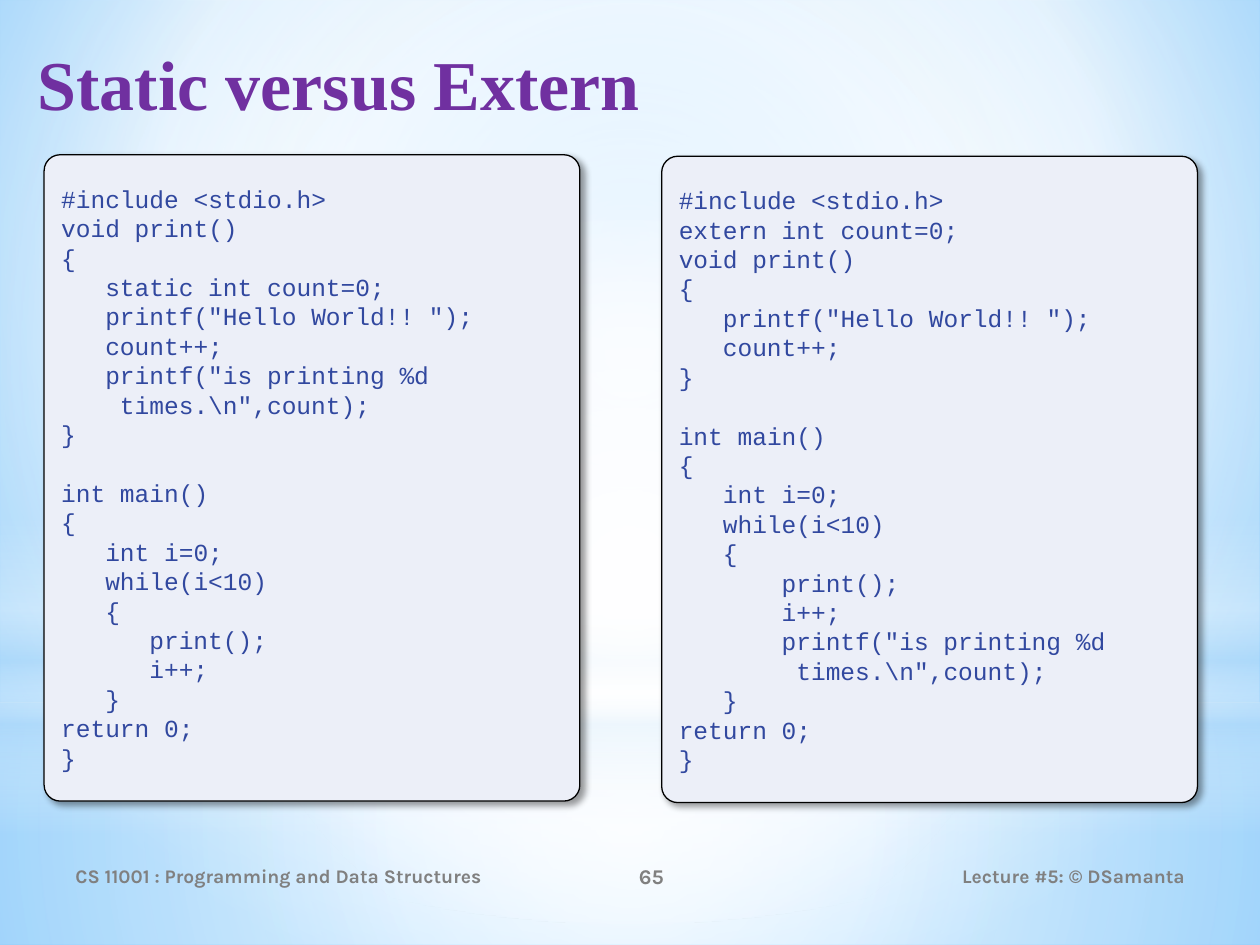
from dataclasses import dataclass

from pptx import Presentation
from pptx.dml.color import RGBColor
from pptx.enum.shapes import MSO_SHAPE as Shape
from pptx.enum.text import MSO_ANCHOR as Anchor, PP_ALIGN as Align
from pptx.oxml import parse_xml
from pptx.oxml.ns import nsdecls, qn
from pptx.util import Cm, Pt

STATIC_CODE = r"""
#include <stdio.h>
void print()
{
   static int count=0;
   printf("Hello World!! ");
   count++;
   printf("is printing %d
    times.\n",count);
}

int main()
{
   int i=0;
   while(i<10)
   {
      print();
      i++;
   }
return 0;
}
"""

EXTERN_CODE = r"""
#include <stdio.h>
extern int count=0;
void print()
{
   printf("Hello World!! ");
   count++;
}

int main()
{
   int i=0;
   while(i<10)
   {
       print();
       i++;
       printf("is printing %d
        times.\n",count);
   }
return 0;
}
"""


@dataclass(frozen=True)
class Theme:
    heading: str = "7030A0"
    code: str = "31489F"
    panel: str = "ECEFF8"
    outline: str = "000000"
    footer: str = "808080"
    white: str = "FFFFFF"
    haze: str = "B4DCFA"
    sky: str = "9ED5FF"
    deep_sky: str = "5BB9FF"
    heading_font: str = "Times New Roman"
    code_font: str = "Courier New"
    footer_font: str = "Karla"
    heading_size: float = 40
    code_size: float = 14
    code_line: float = 16.8
    footer_size: float = 11
    number_size: float = 12


CENTRE = (50, 50, 50, 50)


class SlideBuilder:
    def __init__(self, slide, theme):
        self.slide = slide
        self.theme = theme

    def set_gradient(self, fill, owner, stops, focus=None):
        """Stops are (position, colour, opacity) in percent; without a focus the gradient runs down."""
        fill.gradient()
        gradient = owner.find(".//" + qn("a:gradFill"))
        for child in list(gradient):
            gradient.remove(child)
        stop_xml = "".join(
            f'<a:gs pos="{pos * 1000}"><a:srgbClr val="{colour}">'
            f'<a:alpha val="{opacity * 1000}"/></a:srgbClr></a:gs>'
            for pos, colour, opacity in stops)
        gradient.append(parse_xml(f'<a:gsLst {nsdecls("a")}>{stop_xml}</a:gsLst>'))
        if focus:
            left, top, right, bottom = (edge * 1000 for edge in focus)
            direction = (f'<a:path {nsdecls("a")} path="circle"><a:fillToRect l="{left}" '
                         f't="{top}" r="{right}" b="{bottom}"/></a:path>')
        else:
            direction = f'<a:lin {nsdecls("a")} ang="5400000" scaled="0"/>'
        gradient.append(parse_xml(direction))

    def background(self, stops, focus):
        self.set_gradient(self.slide.background.fill, self.slide._element, stops, focus)

    def glow(self, kind, top, height, stops, focus=CENTRE):
        """Full-width translucent band of the backdrop."""
        band = self.slide.shapes.add_shape(kind, Cm(0), Cm(top), Cm(25.4), Cm(height))
        band.shadow.inherit = False
        band.line.fill.background()
        self.set_gradient(band.fill, band._element, stops, focus)

    def style(self, paragraph, font, size, colour, bold=False):
        paragraph.font.name = font
        paragraph.font.size = Pt(size)
        paragraph.font.bold = bold
        paragraph.font.color.rgb = RGBColor.from_string(colour)

    def label(self, text, box, font, size, colour, align=Align.LEFT, anchor=Anchor.MIDDLE):
        frame = self.slide.shapes.add_textbox(*map(Cm, box)).text_frame
        frame.word_wrap = True
        frame.vertical_anchor = anchor
        paragraph = frame.paragraphs[0]
        paragraph.text = text
        paragraph.alignment = align
        self.style(paragraph, font, size, colour, bold=True)
        return frame

    def heading(self, text):
        theme = self.theme
        frame = self.label(text, (0.51, 0.53, 24.2, 3.18), theme.heading_font,
                           theme.heading_size, theme.heading, anchor=Anchor.TOP)
        frame.margin_top = Cm(0.28)

    def footer(self, text, left, width, align, size):
        self.label(text, (left, 17.15, width, 1.02), self.theme.footer_font,
                   size, self.theme.footer, align)

    def code_panel(self, code, left, top):
        theme = self.theme
        panel = self.slide.shapes.add_shape(
            Shape.ROUNDED_RECTANGLE, Cm(left), Cm(top), Cm(10.8), Cm(13.03))
        panel.adjustments[0] = 0.03
        panel.fill.solid()
        panel.fill.fore_color.rgb = RGBColor.from_string(theme.panel)
        panel.line.color.rgb = RGBColor.from_string(theme.outline)
        panel.line.width = Pt(0.75)
        self.cast_shadow(panel)
        frame = panel.text_frame
        frame.word_wrap = True
        frame.vertical_anchor = Anchor.MIDDLE
        self.write_code(frame, code)

    def cast_shadow(self, panel):
        panel.shadow.inherit = False
        effects = panel._element.spPr.find(qn("a:effectLst"))
        effects.append(parse_xml(
            f'<a:outerShdw {nsdecls("a")} blurRad="{Pt(4)}" dist="{Pt(3)}" dir="2700000" '
            f'algn="tl" rotWithShape="0"><a:srgbClr val="{self.theme.outline}">'
            '<a:alpha val="40000"/></a:srgbClr></a:outerShdw>'))

    def write_code(self, frame, code):
        """Turn leading spaces into indents and empty lines into paragraph spacing."""
        theme = self.theme
        character = 0.6 * theme.code_size
        gap = 0
        for index, line in enumerate(code.strip().splitlines()):
            statement = line.lstrip()
            if not statement:
                gap += theme.code_line
                continue
            paragraph = frame.add_paragraph() if index else frame.paragraphs[0]
            paragraph.text = statement
            paragraph.alignment = Align.LEFT
            paragraph.line_spacing = Pt(theme.code_line)
            paragraph.space_before = Pt(gap)
            indent = Pt(character * (len(line) - len(statement)))
            paragraph._p.get_or_add_pPr().set("marL", str(indent))
            self.style(paragraph, theme.code_font, theme.code_size, theme.code)
            gap = 0


def main():
    deck = Presentation()
    deck.slide_width, deck.slide_height = Cm(25.4), Cm(19.05)
    theme = Theme()
    white, haze = theme.white, theme.haze
    page = SlideBuilder(deck.slides.add_slide(deck.slide_layouts[6]), theme)

    page.background([(0, theme.sky, 100), (60, white, 100), (100, theme.deep_sky, 100)],
                    (20, 10, 20, 60))
    page.glow(Shape.RECTANGLE, 14.17, 4.88, [(0, white, 91), (37, white, 76), (100, haze, 79)])
    page.glow(Shape.RECTANGLE, 0, 14.17, [(0, white, 89), (48, white, 62), (100, haze, 79)])
    page.glow(Shape.RECTANGLE, 10.46, 6.35,
              [(0, white, 0), (29, white, 30), (45, haze, 40),
               (55, white, 26), (65, haze, 60), (100, white, 0)], focus=None)
    page.glow(Shape.OVAL, 4.45, 14.17, [(0, white, 100), (56, white, 0)])

    page.heading("Static versus Extern")
    page.footer("CS 11001 : Programming and Data Structures", 1.27, 9.32,
                Align.LEFT, theme.footer_size)
    page.footer("65", 10.59, 5.08, Align.CENTER, theme.number_size)
    page.footer("Lecture #5: © DSamanta", 17.15, 6.99, Align.RIGHT, theme.footer_size)
    page.code_panel(STATIC_CODE, 0.89, 3.12)
    page.code_panel(EXTERN_CODE, 13.34, 3.15)
    deck.save("out.pptx")


if __name__ == "__main__":
    main()
